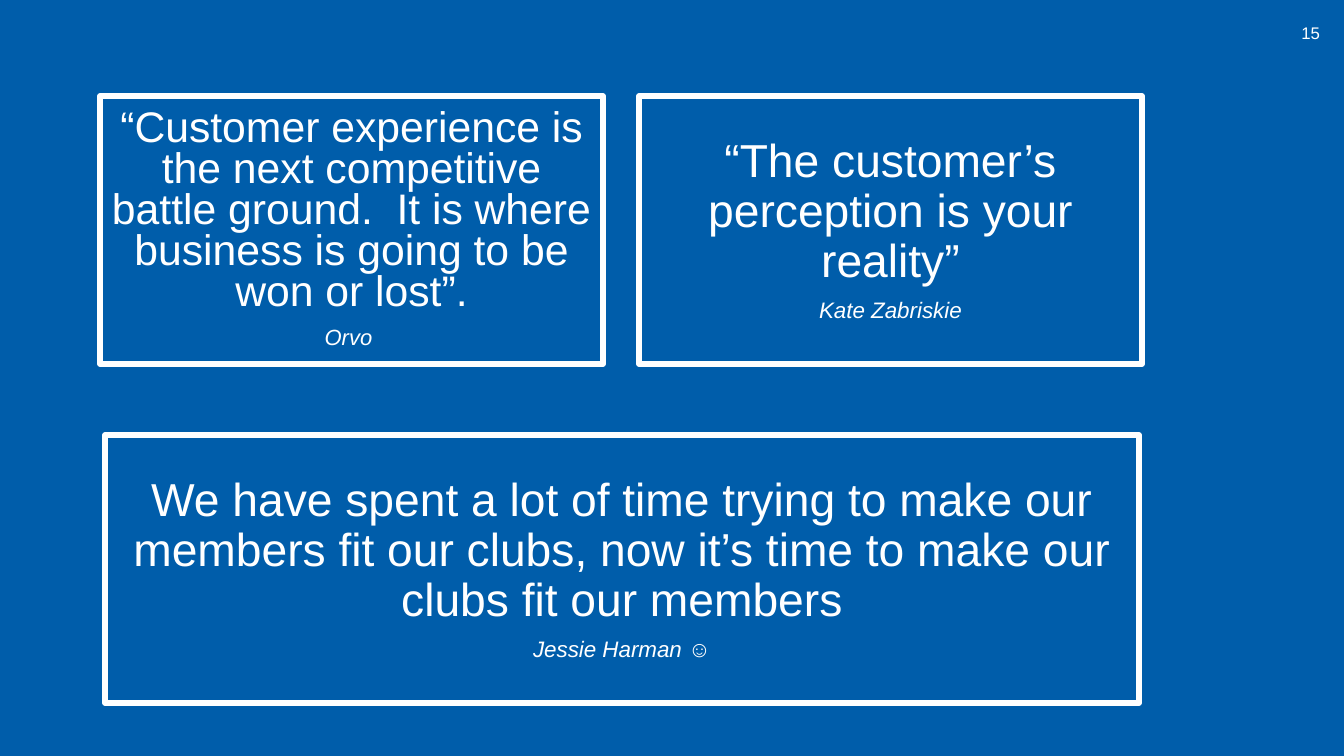
from lxml import etree
from pptx import Presentation
from pptx.dml.color import RGBColor
from pptx.enum.shapes import MSO_SHAPE as Preset
from pptx.enum.text import MSO_ANCHOR as Anchor, PP_ALIGN as Align
from pptx.oxml.ns import qn
from pptx.util import Pt

PX = 914400 / 100.8
COLOURS = {name: RGBColor.from_string(value) for name, value in
           {"blue": "005DAA", "white": "FFFFFF"}.items()}


def px(*lengths):
    return [round(length * PX) for length in lengths]


def add_run(paragraph, text, size, italic=False):
    run = paragraph.add_run()
    run.text = text
    run.font.name = "Arial"
    run.font.size = Pt(size)
    run.font.italic = italic
    run.font.color.rgb = COLOURS["white"]


presentation = Presentation()
presentation.slide_width, presentation.slide_height = px(1344, 756)
slide = presentation.slides.add_slide(presentation.slide_layouts[6])

# Blue backdrop
backdrop = slide.shapes.add_shape(Preset.RECTANGLE, *px(0, 0, 1344, 756))
backdrop.shadow.inherit = False
backdrop.fill.solid()
backdrop.fill.fore_color.rgb = COLOURS["blue"]
backdrop.line.fill.background()

# Slide number
number_box = slide.shapes.add_textbox(*px(1284, 13, 46, 40))
number_box.text_frame.word_wrap = True
number_box.text_frame.vertical_anchor = Anchor.MIDDLE
paragraph = number_box.text_frame.paragraphs[0]
paragraph.alignment = Align.RIGHT
add_run(paragraph, "15", 12)

# Framed quotes: left, top, width, quote, size, line spacing, author runs, author size
quotes = [
    (100, 96, 503,
     "“Customer experience is the next competitive battle ground.  "
     "It is where business is going to be won or lost”.",
     30.5, 0.8, [("Orvo ", True)], 15.7),
    (639, 96, 503, "“The customer’s perception is your reality”",
     33, 0.9, [("Kate Zabriskie", True)], 16),
    (105, 435, 1034,
     "We have spent a lot of time trying to make our members fit our clubs, "
     "now it’s time to make our clubs fit our members",
     33, 0.9, [("Jessie Harman ", True), ("☺", False)], 16),
]
for left, top, width, quote, size, spacing, author, author_size in quotes:
    frame = slide.shapes.add_shape(Preset.RECTANGLE, *px(left, top, width, 268))
    frame.shadow.inherit = False
    frame.fill.background()
    frame.line.color.rgb = COLOURS["white"]
    frame.line.width = Pt(4)
    etree.SubElement(frame.line._get_or_add_ln(), qn("a:round"))

    text_frame = frame.text_frame
    text_frame.word_wrap = True
    text_frame.vertical_anchor = Anchor.MIDDLE
    paragraph = text_frame.paragraphs[0]
    paragraph.alignment = Align.CENTER
    paragraph.line_spacing = spacing
    add_run(paragraph, quote, size)

    paragraph = text_frame.add_paragraph()
    paragraph.alignment = Align.CENTER
    paragraph.line_spacing = 0.8
    paragraph.space_before = Pt(10)
    for text, italic in author:
        add_run(paragraph, text, author_size, italic)

presentation.save("out.pptx")
